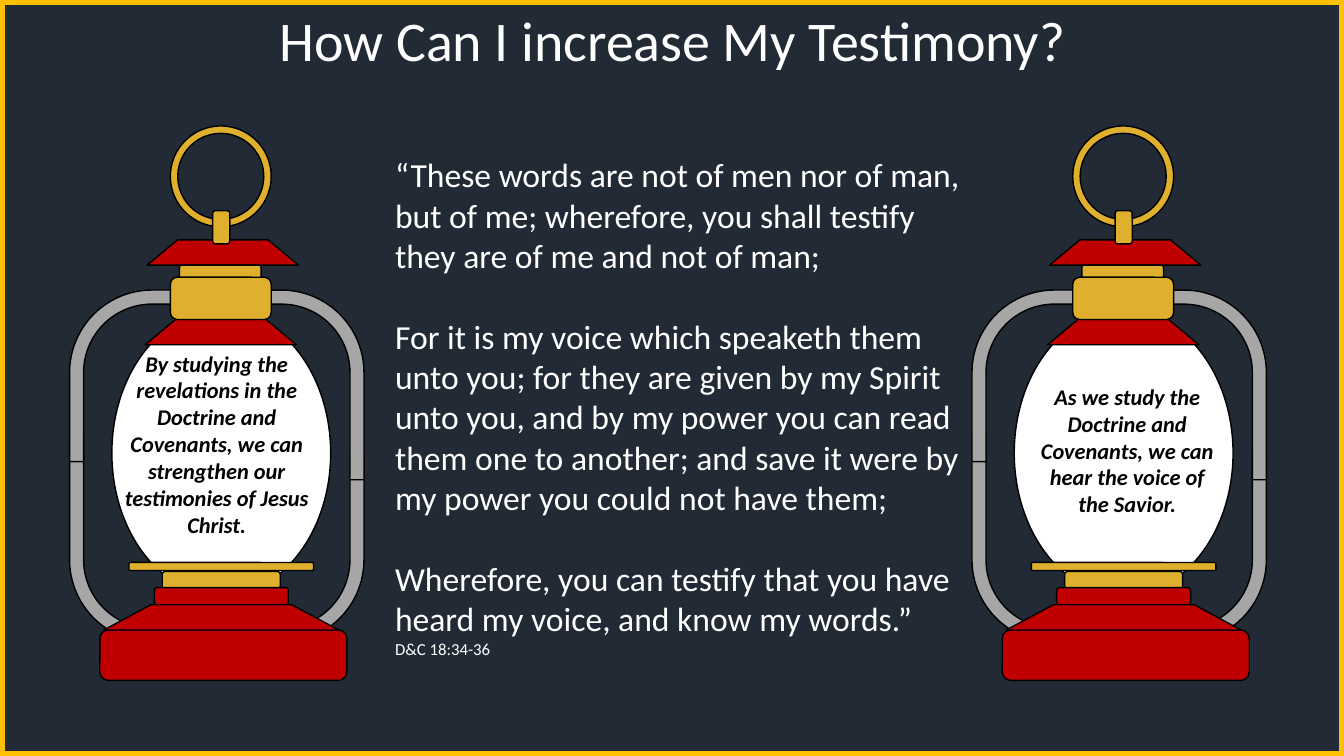
from dataclasses import dataclass

from pptx import Presentation
from pptx import util as u
from pptx.dml.color import RGBColor
from pptx.enum import shapes, text
from pptx.oxml.ns import qn

# Content
TITLE = "How Can I increase My Testimony?"
QUOTE = [
    "“These words are not of men nor of man, but of me; wherefore, you shall testify "
    "they are of me and not of man;",
    "For it is my voice which speaketh them unto you; for they are given by my Spirit "
    "unto you, and by my power you can read them one to another; and save it were by "
    "my power you could not have them;",
    "Wherefore, you can testify that you have heard my voice, and know my words.”",
]
REFERENCE = "D&C 18:34-36"
# Each lantern: left edge, label box (px), label
LANTERNS = [
    (69, (111, 342, 208, 199),
     "By studying the revelations in the Doctrine and Covenants, we can strengthen "
     "our testimonies of Jesus Christ."),
    (964, (1014, 375, 208, 145),
     "As we study the Doctrine and Covenants, we can hear the voice of the Savior."),
]


# Theme
@dataclass(frozen=True)
class Theme:
    font: str = "Calibri"
    night: str = "222A35"
    border: str = "FFC000"
    steel: str = "A6A6A6"
    red: str = "C00000"
    brass: str = "DEB02E"
    white: str = "FFFFFF"
    black: str = "000000"
    title_size: int = 40
    quote_size: int = 24
    label_size: int = 16
    reference_size: int = 12
    stanza_gap: int = 29


THEME = Theme()
PX = 9144  # EMU per px, 100 px to the inch
WIDTH, HEIGHT = 1333, 750

# Lantern parts, back to front: preset, colour, (left within lantern, top, width, height), format
PRESET = shapes.MSO_SHAPE
HANDLE = (0.098, 0.139, 0.119, 0.576)
ROOF = {"rotation": 180}
PARTS = [
    (PRESET.BENT_ARROW, THEME.steel, (150, 449, 142, 201), {"adjust": HANDLE, "flip": "HV"}),
    (PRESET.BENT_ARROW, THEME.steel, (150, 275, 142, 201), {"adjust": HANDLE, "flip": "H"}),
    (PRESET.BENT_ARROW, THEME.steel, (0, 433, 142, 217), {"adjust": HANDLE, "flip": "V"}),
    (PRESET.BENT_ARROW, THEME.steel, (0, 275, 142, 183), {"adjust": HANDLE}),
    (PRESET.OVAL, THEME.white, (42, 308, 217, 283), {}),
    (PRESET.FLOWCHART_MANUAL_OPERATION, THEME.red, (75, 317, 150, 25), ROOF),
    (PRESET.FLOWCHART_MANUAL_OPERATION, THEME.red, (77, 238, 150, 25), ROOF),
    (PRESET.ROUNDED_RECTANGLE, THEME.brass, (109, 263, 81, 14), {}),
    (PRESET.ROUNDED_RECTANGLE, THEME.brass, (100, 275, 100, 42), {}),
    (PRESET.DONUT, THEME.brass, (100, 125, 100, 100), {"adjust": (0.073,)}),
    (PRESET.ROUNDED_RECTANGLE, THEME.brass, (142, 209, 17, 33), {}),
    (PRESET.ROUNDED_RECTANGLE, THEME.brass, (59, 558, 183, 8), {}),
    (PRESET.ROUNDED_RECTANGLE, THEME.red, (30, 625, 245, 50), {}),
    (PRESET.ROUNDED_RECTANGLE, THEME.brass, (92, 567, 117, 17), {}),
    (PRESET.ROUNDED_RECTANGLE, THEME.red, (84, 583, 133, 17), {}),
    (PRESET.FLOWCHART_MANUAL_OPERATION, THEME.red, (34, 600, 233, 25), ROOF),
]


def emu(box):
    return [length * PX for length in box]


def set_all(target, values):
    for name, value in values.items():
        setattr(target, name, value)


def draw(parent, preset, box, fill, line, line_width, adjust=(), flip="", rotation=0):
    shape = parent.shapes.add_shape(preset, *emu(box))
    shape.shadow.inherit = False
    shape.rotation = rotation
    shape.fill.solid()
    shape.fill.fore_color.rgb = RGBColor.from_string(fill)
    shape.line.color.rgb = RGBColor.from_string(line)
    shape.line.width = u.Pt(line_width)
    for index, value in enumerate(adjust):
        shape.adjustments[index] = value
    for axis in flip:
        shape.element.spPr.find(qn("a:xfrm")).set("flip" + axis, "1")
    return shape


def write(shape, lines, color, align, **font_format):
    """Fill a shape with lines of (words, size, space after)."""
    frame = shape.text_frame
    set_all(frame, {"word_wrap": True, "auto_size": text.MSO_AUTO_SIZE.NONE,
                    "vertical_anchor": text.MSO_ANCHOR.TOP})
    for index, (words, size, gap) in enumerate(lines):
        paragraph = frame.paragraphs[0] if index == 0 else frame.add_paragraph()
        set_all(paragraph, {"alignment": align, "space_before": u.Pt(0),
                            "space_after": u.Pt(gap)})
        run = paragraph.add_run()
        run.text = words
        set_all(run.font, {"name": THEME.font, "size": u.Pt(size), **font_format})
        run.font.color.rgb = RGBColor.from_string(color)


def draw_lantern(slide, left, label_box, label):
    lantern = slide.shapes.add_group_shape()
    for preset, fill, (x, *rest), part_format in PARTS:
        draw(lantern, preset, (left + x, *rest), fill, THEME.black, 1, **part_format)
    label_text = lantern.shapes.add_textbox(*emu(label_box))
    write(label_text, [(label, THEME.label_size, 0)], THEME.black, text.PP_ALIGN.CENTER,
          bold=True, italic=True)


def main():
    presentation = Presentation()
    set_all(presentation, {"slide_width": WIDTH * PX, "slide_height": HEIGHT * PX})
    slide = presentation.slides.add_slide(presentation.slide_layouts[5])

    # Framed backdrop, behind the title
    title = slide.shapes.title
    backdrop = draw(slide, PRESET.RECTANGLE, (0, 0, WIDTH, HEIGHT),
                    THEME.night, THEME.border, 7)
    title.element.addprevious(backdrop.element)

    # Title
    set_all(title, dict(zip(("left", "top", "width", "height"), emu((167, 0, 1000, 77)))))
    write(title, [(TITLE, THEME.title_size, 0)], THEME.white, text.PP_ALIGN.CENTER)

    # Lanterns
    for lantern in LANTERNS:
        draw_lantern(slide, *lantern)

    # Scripture between the lanterns
    gaps = [THEME.stanza_gap] * (len(QUOTE) - 1) + [0]
    lines = [(stanza, THEME.quote_size, gap) for stanza, gap in zip(QUOTE, gaps)]
    lines.append((REFERENCE, THEME.reference_size, 0))
    scripture = slide.shapes.add_textbox(*emu((382, 148, 582, 515)))
    write(scripture, lines, THEME.white, text.PP_ALIGN.LEFT)

    presentation.save("out.pptx")


if __name__ == "__main__":
    main()
